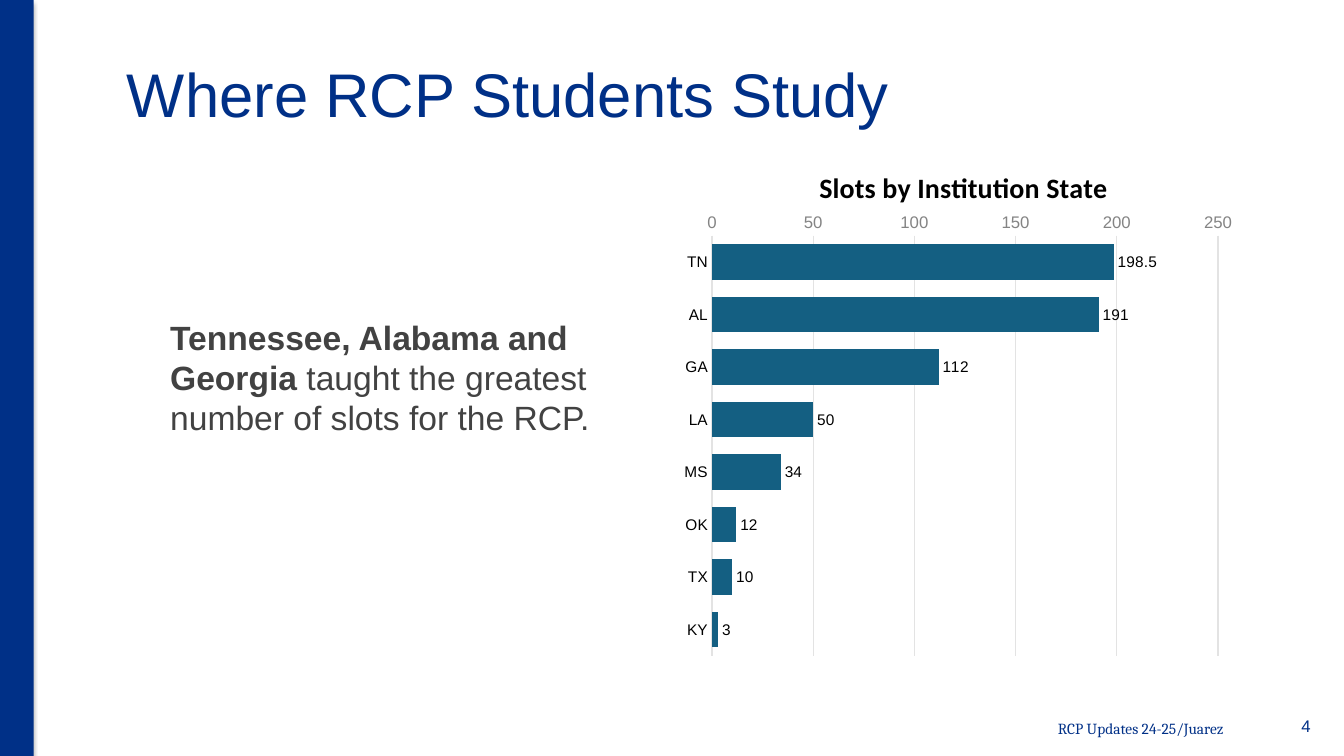
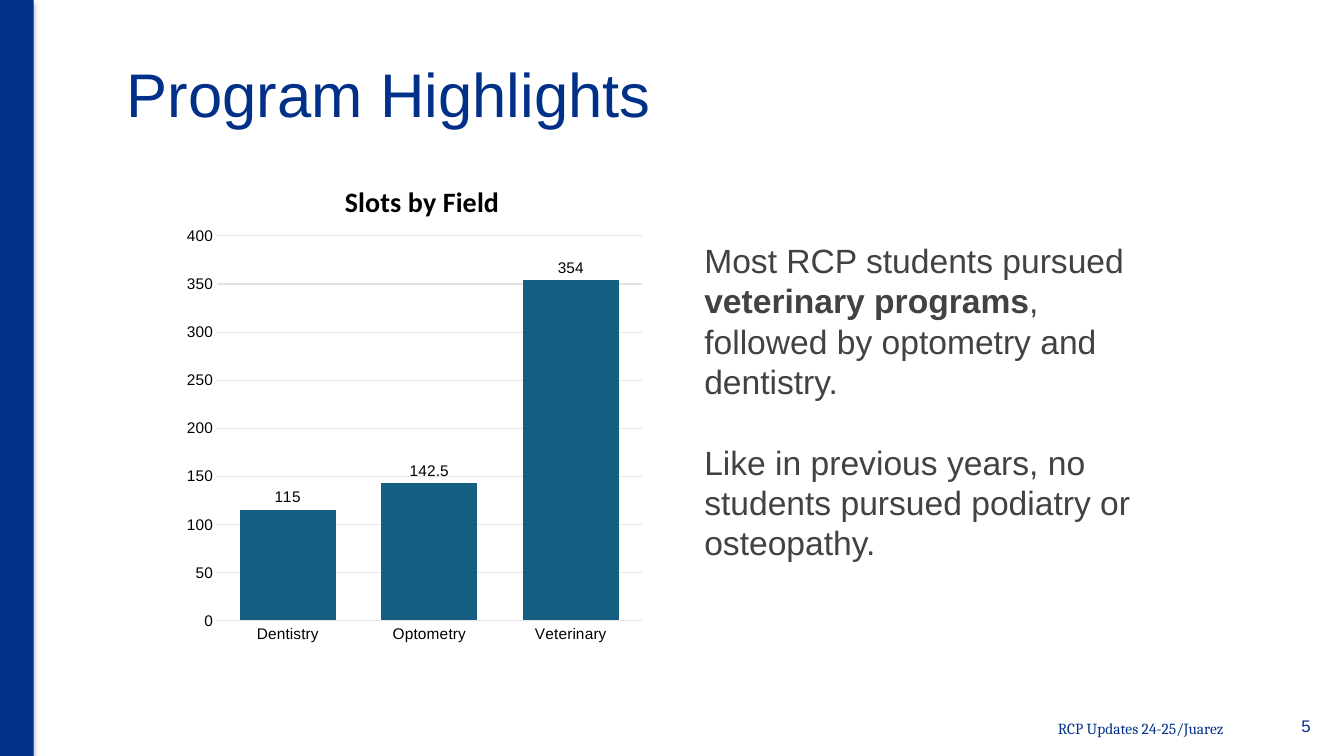
from lxml import etree
from pptx import Presentation
from pptx.chart.data import CategoryChartData
from pptx.dml.color import RGBColor
from pptx.enum.chart import XL_CHART_TYPE, XL_LABEL_POSITION, XL_TICK_MARK
from pptx.enum.shapes import MSO_SHAPE
from pptx.enum.text import MSO_ANCHOR, PP_ALIGN
from pptx.oxml import parse_xml
from pptx.oxml.ns import nsdecls, qn
from pptx.util import Cm, Pt

NAVY = RGBColor(0x00, 0x30, 0x87)
TEAL = RGBColor(0x14, 0x5F, 0x82)
DARK = RGBColor(0x42, 0x42, 0x42)
GRAY = RGBColor(0x84, 0x84, 0x84)
PALE = RGBColor(0xE3, 0xE3, 0xE3)
BLACK = RGBColor(0, 0, 0)

WIDE, HIGH = 33.87, 19.05
FOOT = "RCP Updates 24-25/Juarez"
FIRST = 4

SLIDES = [
    {
        "title": "Where RCP Students Study",
        "body": [
            [("Tennessee, Alabama and Georgia ", True),
             ("taught the greatest number of slots for the RCP.", False)],
        ],
        "place": (4.04, 7.85, 11.46, 3.33),
        "chart": {
            "kind": XL_CHART_TYPE.BAR_CLUSTERED,
            "title": "Slots by Institution State",
            "place": (16.94, 3.56, 14.33, 13.23),
            "data": {"TN": 198.5, "AL": 191, "GA": 112, "LA": 50,
                     "MS": 34, "OK": 12, "TX": 10, "KY": 3},
            "top": 250, "scale": (12, GRAY), "flip": True, "lap": 0,
            "head": (0.25, 0.04), "plot": (0.07, 0.18, 0.89, 0.8),
        },
    },
    {
        "title": "Program Highlights",
        "body": [
            [("Most RCP students pursued ", False),
             ("veterinary programs", True),
             (", followed by optometry and dentistry.", False)],
            [("Like in previous years, no students pursued podiatry "
              "or osteopathy.", False)],
        ],
        "place": (17.5, 5.92, 11.46, 8.46),
        "chart": {
            "kind": XL_CHART_TYPE.COLUMN_CLUSTERED,
            "title": "Slots by Field",
            "place": (4.52, 3.96, 11.89, 12.42),
            "data": {"Dentistry": 115, "Optometry": 142.5,
                     "Veterinary": 354},
            "top": 400, "scale": (11, BLACK), "flip": False, "lap": -27,
            "head": (0.34, 0.04), "plot": (0.08, 0.16, 0.9, 0.78),
        },
    },
]


def style(font, size, color, name="Arial", bold=False):
    font.size = Pt(size)
    font.name = name
    font.bold = bold
    font.color.rgb = color


def add_text(slide, place, paras, size, color, name="Arial",
             anchor=MSO_ANCHOR.MIDDLE, align=PP_ALIGN.LEFT, pitch=None):
    frame = slide.shapes.add_textbox(*map(Cm, place)).text_frame
    frame.word_wrap = True
    frame.vertical_anchor = anchor
    for num, runs in enumerate(paras):
        para = frame.add_paragraph() if num else frame.paragraphs[0]
        para.alignment = align
        if pitch:
            para.line_spacing = Pt(pitch)
            if num:
                para.space_before = Pt(pitch)
        for text, bold in runs:
            run = para.add_run()
            run.text = text
            style(run.font, size, color, name, bold)


def add_band(slide):
    band = slide.shapes.add_shape(
        MSO_SHAPE.RECTANGLE, 0, 0, Cm(0.85), Cm(HIGH))
    band.fill.solid()
    band.fill.fore_color.rgb = NAVY
    band.line.fill.background()
    band.shadow.inherit = False
    glow = band.element.spPr.find(qn("a:effectLst"))
    glow.append(parse_xml(
        f'<a:outerShdw {nsdecls("a")} blurRad="39370" dist="22860" '
        'dir="5400000" rotWithShape="0"><a:srgbClr val="000000">'
        '<a:alpha val="35000"/></a:srgbClr></a:outerShdw>'))


def set_layout(owner, spot, index, inner=False):
    for old in owner.findall(qn("c:layout")):
        owner.remove(old)
    layout = etree.Element(qn("c:layout"))
    manual = etree.SubElement(layout, qn("c:manualLayout"))
    items = [("layoutTarget", "inner")] if inner else []
    items += [("xMode", "edge"), ("yMode", "edge")]
    items += zip("xywh", spot)
    for tag, val in items:
        etree.SubElement(manual, qn(f"c:{tag}")).set("val", str(val))
    owner.insert(index, layout)


def set_axis(axis, size, color):
    axis.major_tick_mark = XL_TICK_MARK.NONE
    axis.minor_tick_mark = XL_TICK_MARK.NONE
    style(axis.tick_labels.font, size, color)


def set_line(line):
    line.color.rgb = PALE
    line.width = Pt(0.75)


def add_graph(slide, item):
    data = CategoryChartData()
    data.categories = list(item["data"])
    data.add_series("Series 1", list(item["data"].values()))
    chart = slide.shapes.add_chart(
        item["kind"], *map(Cm, item["place"]), data).chart
    style(chart.font, 10, DARK)
    chart.has_legend = False

    chart.has_title = True
    run = chart.chart_title.text_frame.paragraphs[0].add_run()
    run.text = item["title"]
    style(run.font, 20, BLACK, "Calibri", True)
    set_layout(chart.chart_title.element, item["head"], 1)
    area = chart.element.find(".//" + qn("c:plotArea"))
    set_layout(area, item["plot"], 0, True)

    cats, vals = chart.category_axis, chart.value_axis
    set_axis(cats, 11, BLACK)
    set_line(cats.format.line)
    cats.reverse_order = item["flip"]
    set_axis(vals, *item["scale"])
    vals.format.line.fill.background()
    set_line(vals.major_gridlines.format.line)
    vals.minimum_scale = 0
    vals.maximum_scale = item["top"]
    vals.major_unit = 50

    plot = chart.plots[0]
    plot.vary_by_categories = False
    plot.gap_width = 47
    plot.overlap = item["lap"]
    fill = plot.series[0].format.fill
    fill.solid()
    fill.fore_color.rgb = TEAL
    plot.has_data_labels = True
    labels = plot.data_labels
    labels.show_value = True
    labels.position = XL_LABEL_POSITION.OUTSIDE_END
    style(labels.font, 11, BLACK)


def add_page(deck, num, item):
    slide = deck.slides.add_slide(deck.slide_layouts[6])
    add_band(slide)
    add_text(slide, (19.43, 17.78, 11.66, 1.14), [[(FOOT, False)]],
             11, NAVY, "Cambria", align=PP_ALIGN.RIGHT)
    add_text(slide, (2.95, 0.76, 28.68, 3.18), [[(item["title"], False)]],
             44, NAVY)
    add_text(slide, (31.17, 17.73, 2.11, 1.14), [[(str(num), False)]],
             12, NAVY, align=PP_ALIGN.RIGHT)
    add_graph(slide, item["chart"])
    add_text(slide, item["place"], item["body"], 24, DARK,
             anchor=MSO_ANCHOR.TOP, pitch=28.8)


def main():
    deck = Presentation()
    deck.slide_width, deck.slide_height = Cm(WIDE), Cm(HIGH)
    for num, item in enumerate(SLIDES, FIRST):
        add_page(deck, num, item)
    deck.save("out.pptx")


if __name__ == "__main__":
    main()
